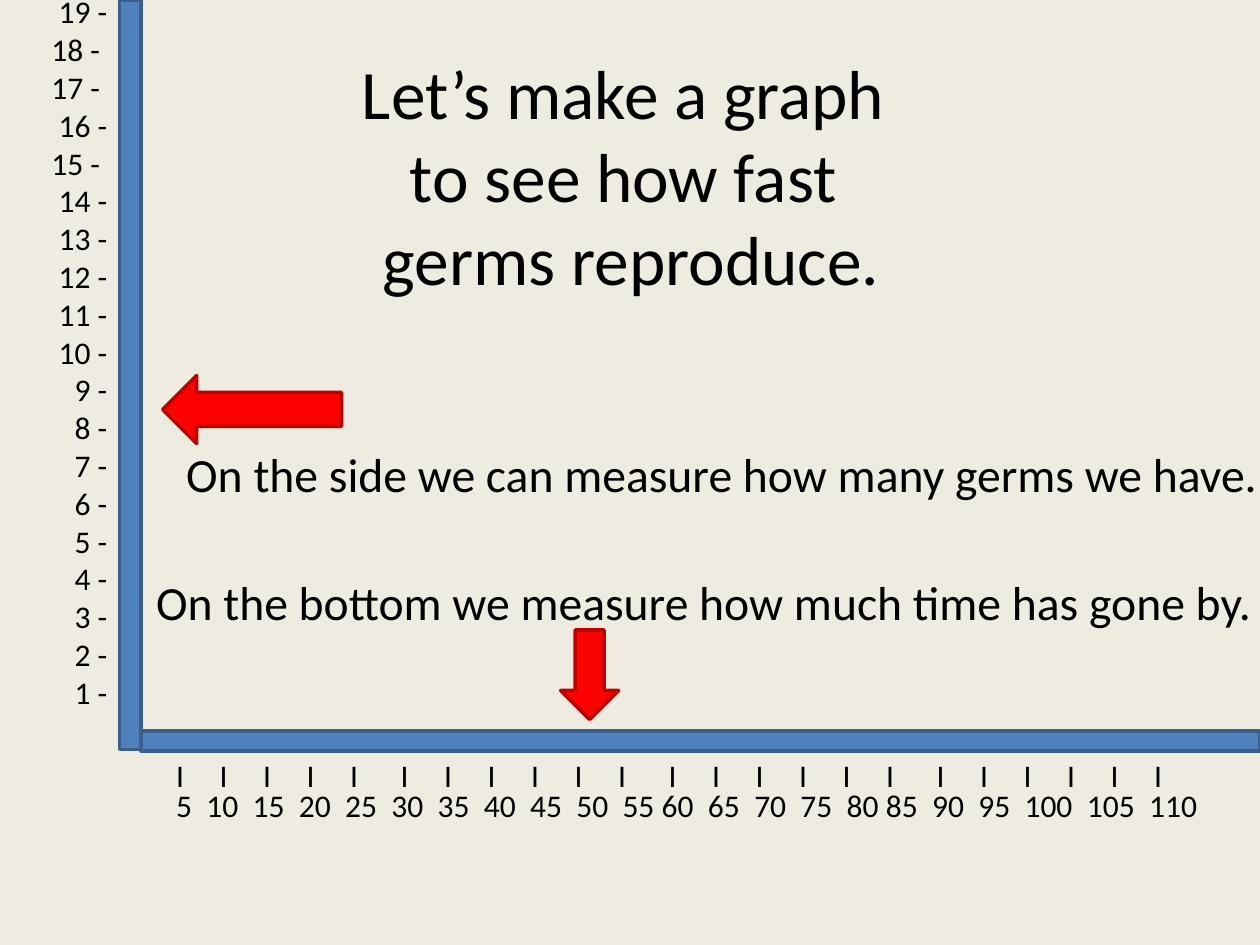
from pptx import Presentation
from pptx.dml.color import RGBColor
from pptx.enum.shapes import MSO_SHAPE
from pptx.enum.text import MSO_ANCHOR, MSO_AUTO_SIZE, PP_ALIGN
from pptx.oxml.xmlchemy import OxmlElement
from pptx.util import Inches, Pt

COLORS = {"paper": "EEECE1", "ink": "000000", "axis": "4F81BD",
          "axis_edge": "3A5F8C", "arrow": "FF0000", "arrow_edge": "C00000"}
FONT = "Calibri"

# Content
HEADING = "Let’s make a graph \vto see how fast \vgerms reproduce."
STATEMENTS = [
    ("On the bottom we measure how much time has gone by.", (1.14, 4.5, 9, 0.74)),
    ("On the side we can measure how many germs we have.", (1.38, 3.48, 9, 0.74)),
]
TRAILING_SPACE = (18, 17, 15)
GERM_LABELS = [f"{n} - " if n in TRAILING_SPACE else f"{n} -"
               for n in range(19, 0, -1)]
TIME_LABELS = [str(n) for n in range(5, 111, 5)]
TICKS = ["I"] * 23
AXES = [(1.12, 5.8, 8.88, 0.16), (0.95, 0, 0.17, 5.95)]
ARROWS = [(MSO_SHAPE.LEFT_ARROW, (1.29, 2.98, 1.42, 0.54)),
          (MSO_SHAPE.DOWN_ARROW, (4.45, 5, 0.46, 0.71))]

# Spacing along the time axis, in inches
DIGIT_WIDTH, LABEL_GAP, TIGHT_GAP = 0.127, 0.113, 0.057
TIGHT_AFTER = ("55", "80")
TICK_STEP, WIDE_TICK_STEP = 0.345, 0.402
WIDE_AFTER = (4, 10, 16)


def rgb(name):
    return RGBColor.from_string(COLORS[name])


def write(frame, lines, size, **paragraph_format):
    frame.word_wrap = True
    frame.auto_size = MSO_AUTO_SIZE.NONE
    frame.text = "\n".join(lines)
    for paragraph in frame.paragraphs:
        for key, value in paragraph_format.items():
            setattr(paragraph, key, value)
        for run in paragraph.runs:
            for key, value in {"size": Pt(size), "name": FONT}.items():
                setattr(run.font, key, value)
            run.font.color.rgb = rgb("ink")


def add_text(box, lines, size, **paragraph_format):
    frame = slide.shapes.add_textbox(*map(Inches, box)).text_frame
    write(frame, lines, size, **paragraph_format)
    return frame


def add_tabbed_row(box, marks, steps):
    """One line of marks, each after the first at its own tab stop."""
    row = add_text(box, ["\t".join(marks)], 18).paragraphs[0]
    stops = OxmlElement("a:tabLst")
    position = 0
    for step in steps:
        position += step
        stop = OxmlElement("a:tab")
        stop.set("pos", str(Inches(position)))
        stop.set("algn", "l")
        stops.append(stop)
    row._p.get_or_add_pPr().append(stops)


def add_filled(kind, box, color):
    shape = slide.shapes.add_shape(kind, *map(Inches, box))
    shape.shadow.inherit = False
    shape.fill.solid()
    shape.fill.fore_color.rgb = rgb(color)
    shape.line.color.rgb = rgb(f"{color}_edge")
    shape.line.width = Pt(2)


prs = Presentation()
prs.slide_width, prs.slide_height = Inches(10), Inches(7.5)
slide = prs.slides.add_slide(prs.slide_layouts[5])
slide.background.fill.solid()
slide.background.fill.fore_color.rgb = rgb("paper")

# Heading
heading = slide.shapes.title
for side, value in {"left": 0.51, "top": 0.76, "width": 9, "height": 1.25}.items():
    setattr(heading, side, Inches(value))
heading.text_frame.vertical_anchor = MSO_ANCHOR.MIDDLE
write(heading.text_frame, [HEADING], 39.6, alignment=PP_ALIGN.CENTER)

# Statements about each axis
for statement, box in STATEMENTS:
    add_text(box, [statement], 27.2, space_before=Pt(2))

# Axes
for box in AXES:
    add_filled(MSO_SHAPE.RECTANGLE, box, "axis")

# Germ count scale
add_text((0.2, -0.11, 0.75, 5.86), GERM_LABELS, 18, alignment=PP_ALIGN.RIGHT)

# Time scale
add_tabbed_row((1.3, 6.19, 8.5, 0.4), TIME_LABELS,
               [len(label) * DIGIT_WIDTH
                + (TIGHT_GAP if label in TIGHT_AFTER else LABEL_GAP)
                for label in TIME_LABELS[:-1]])
add_tabbed_row((1.3, 5.95, 8.5, 0.4), TICKS,
               [WIDE_TICK_STEP if i in WIDE_AFTER else TICK_STEP
                for i in range(len(TICKS) - 1)])

# Arrows pointing at the axes
for kind, box in ARROWS:
    add_filled(kind, box, "arrow")

prs.save("out.pptx")
